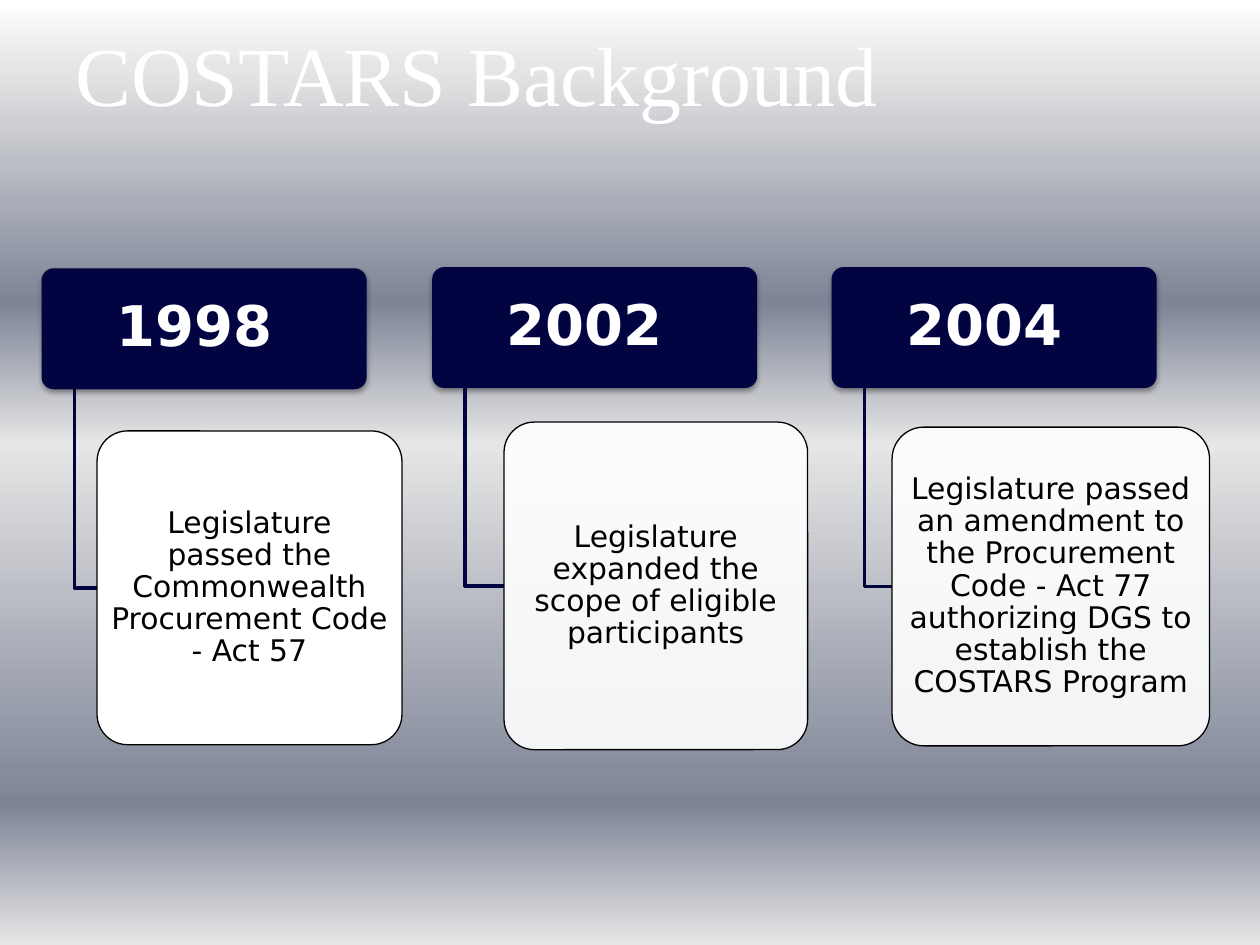
from lxml import etree
from pptx import Presentation
from pptx.dml.color import RGBColor
from pptx.enum.shapes import MSO_SHAPE
from pptx.enum.text import MSO_ANCHOR, PP_ALIGN
from pptx.oxml.ns import qn
from pptx.util import Inches, Pt

ROUND = MSO_SHAPE.ROUNDED_RECTANGLE
MIDDLE = MSO_ANCHOR.MIDDLE
CENTER = PP_ALIGN.CENTER
NAVY = RGBColor(0x01, 0x04, 0x41)
WHITE = RGBColor(0xFF, 0xFF, 0xFF)
BLACK = RGBColor(0x00, 0x00, 0x00)
SILVER = RGBColor(0xE6, 0xE6, 0xE6)
SLATE = RGBColor(0x7D, 0x84, 0x96)
STOPS = [(0, WHITE), (7, SILVER), (32, SLATE), (47, SILVER), (85, SLATE), (100, SILVER)]


def add(parent, tag, **attrs):
    return etree.SubElement(parent, qn(tag), {k: str(v) for k, v in attrs.items()})


def panel(box, text, fill, color, size, bold, inset):
    card = slide.shapes.add_shape(ROUND, *[Inches(v) for v in box])
    card.adjustments[0] = 0.1
    card.shadow.inherit = False
    card.fill.solid()
    card.fill.fore_color.rgb = fill
    frame = card.text_frame
    frame.word_wrap = True
    frame.vertical_anchor = MIDDLE
    frame.margin_left = frame.margin_right = Inches(inset)
    frame.margin_top = frame.margin_bottom = Inches(inset / 2)
    frame.text = text
    para = frame.paragraphs[0]
    para.alignment = CENTER
    para.line_spacing = 0.9
    font = para.runs[0].font
    font.name = "DejaVu Sans"
    font.size = Pt(size)
    font.bold = bold
    font.color.rgb = color
    return card


prs = Presentation()
prs.slide_width = Inches(10)
prs.slide_height = Inches(7.5)
slide = prs.slides.add_slide(prs.slide_layouts[6])

back = slide.background.fill
back.gradient()
back.gradient_angle = 270
stops = slide.element.find(".//" + qn("a:gsLst"))
for stop in list(stops):
    stops.remove(stop)
for pos, color in STOPS:
    add(add(stops, "a:gs", pos=pos * 1000), "a:srgbClr", val=color)

title = slide.shapes.add_textbox(Inches(0.5), Inches(0.33), Inches(8.83), Inches(0.5))
frame = title.text_frame
frame.word_wrap = True
frame.vertical_anchor = MIDDLE
frame.text = "COSTARS Background"
font = frame.paragraphs[0].runs[0].font
font.name = "Times New Roman"
font.size = Pt(48)
font.color.rgb = WHITE

EVENTS = [
    ("1998 ", (0.33, 2.13), (0.77, 3.42, 2.42, 2.49), 100,
     "Legislature passed the Commonwealth Procurement Code - Act 57"),
    ("2002 ", (3.43, 2.12), (4, 3.35, 2.41, 2.6), 90,
     "Legislature expanded the scope of eligible participants"),
    ("2004 ", (6.6, 2.12), (7.08, 3.39, 2.52, 2.53), 90,
     "Legislature passed an amendment to the Procurement Code - Act 77 "
     "authorizing DGS to establish the COSTARS Program"),
]
for year, (left, top), body, alpha, text in EVENTS:
    head = panel((left, top, 2.58, 0.96), year, NAVY, WHITE, 32, True, 0.07)
    head.line.fill.background()
    effects = head.element.spPr.find(qn("a:effectLst"))
    shadow = add(effects, "a:outerShdw", blurRad=Pt(3.1), dist=Pt(1.8),
                 dir=5400000, rotWithShape=0)
    add(add(shadow, "a:srgbClr", val=BLACK), "a:alpha", val=35000)

    stem = Inches(left + 0.26)
    mid = Inches(body[1] + body[3] / 2)
    build = slide.shapes.build_freeform(stem, Inches(top + 0.96))
    build.add_line_segments([(stem, mid), (Inches(body[0]), mid)], close=False)
    elbow = build.convert_to_shape()
    elbow.shadow.inherit = False
    elbow.fill.background()
    elbow.line.color.rgb = NAVY
    elbow.line.width = Pt(2)

    card = panel(body, text, WHITE, BLACK, 17, False, 0.04)
    card.line.color.rgb = BLACK
    card.line.width = Pt(0.75)
    if alpha < 100:
        tint = card.element.spPr.find(qn("a:solidFill")).find(qn("a:srgbClr"))
        add(tint, "a:alpha", val=alpha * 1000)

prs.save("out.pptx")
